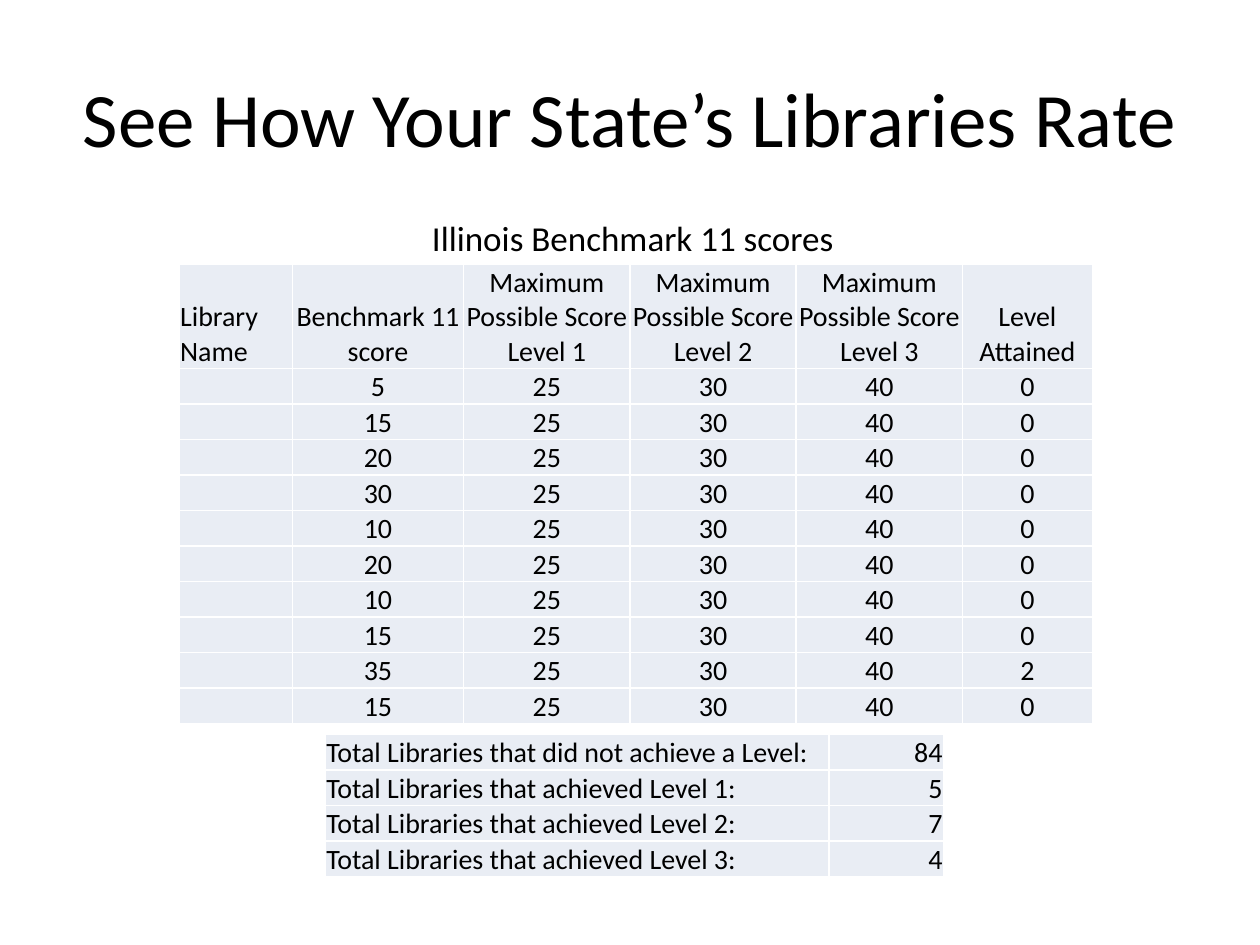
from dataclasses import dataclass

from lxml.etree import SubElement
from pptx import Presentation
from pptx.dml.color import RGBColor as Rgb
from pptx.enum.text import MSO_ANCHOR as Anchor, MSO_AUTO_SIZE as Fit, PP_ALIGN as Align
from pptx.oxml.ns import qn
from pptx.util import Inches, Pt


@dataclass(frozen=True)
class Theme:
    face: str = "Calibri"
    ink: Rgb = Rgb(0, 0, 0)
    fill: Rgb = Rgb(0xE9, 0xED, 0xF4)
    title: int = 44
    label: int = 20
    cell: int = 16


@dataclass(frozen=True)
class Grid:
    left: float
    top: float
    cols: list[float]
    tall: list[float]
    align: list[Align]
    rows: list[list[str]]


THEME = Theme()

# Score table: every library has the same maximum for each level
MAX = ["25", "30", "40"]
MARKS = [(5, 0), (15, 0), (20, 0), (30, 0), (10, 0),
         (20, 0), (10, 0), (15, 0), (35, 2), (15, 0)]
HEAD = ["Library Name", "Benchmark 11 score",
        *[f"Maximum Possible Score Level {n}" for n in (1, 2, 3)],
        "Level Attained"]
SCORES = Grid(
    1.42, 2.1, [0.9, 1.36, 1.32, 1.32, 1.32, 1.03],
    [0.82] + [0.28] * len(MARKS),
    [Align.LEFT] + [Align.CENTER] * 5,
    [HEAD] + [["", str(score), *MAX, str(level)] for score, level in MARKS],
)

# Totals table: libraries per level
GOALS = ["did not achieve a Level"] + [f"achieved Level {n}" for n in (1, 2, 3)]
COUNTS = [84, 5, 7, 4]
TOTALS = Grid(
    2.58, 5.83, [4, 0.91], [0.28] * len(GOALS),
    [Align.LEFT, Align.RIGHT],
    [[f"Total Libraries that {goal}:", str(count)]
     for goal, count in zip(GOALS, COUNTS)],
)


def style(para, size: int, align: Align) -> None:
    para.alignment = align
    font = para.font
    font.name, font.size, font.color.rgb = THEME.face, Pt(size), THEME.ink


def draw_cell(cell, text: str, align: Align) -> None:
    cell.fill.solid()
    cell.fill.fore_color.rgb = THEME.fill
    cell.vertical_anchor = Anchor.BOTTOM
    cell.margin_left = cell.margin_right = cell.margin_top = Inches(0.01)
    cell.margin_bottom = 0
    para = cell.text_frame.paragraphs[0]
    if text:
        para.text = text
    else:
        # An empty cell takes its line height from the end mark
        SubElement(para._p, qn("a:endParaRPr"), sz=str(THEME.cell * 100))
    style(para, THEME.cell, align)


def draw_grid(slide, grid: Grid) -> None:
    table = slide.shapes.add_table(
        len(grid.rows), len(grid.cols), Inches(grid.left), Inches(grid.top),
        Inches(sum(grid.cols)), Inches(sum(grid.tall))).table
    table.first_row = table.horz_banding = False
    for col, width in zip(table.columns, grid.cols):
        col.width = Inches(width)
    for row, height, texts in zip(table.rows, grid.tall, grid.rows):
        row.height = Inches(height)
        for cell, text, align in zip(row.cells, texts, grid.align):
            draw_cell(cell, text, align)


def draw_title(slide, text: str) -> None:
    title = slide.shapes.title
    title.left, title.top = Inches(0.5), Inches(0.3)
    title.width, title.height = Inches(9), Inches(1.25)
    title.text_frame.text = text
    title.text_frame.vertical_anchor = Anchor.MIDDLE
    style(title.text_frame.paragraphs[0], THEME.title, Align.CENTER)


def draw_label(slide, text: str) -> None:
    box = slide.shapes.add_textbox(
        Inches(3.33), Inches(1.67), Inches(3.42), Inches(0.44))
    frame = box.text_frame
    frame.text = text
    frame.word_wrap = False
    frame.auto_size = Fit.SHAPE_TO_FIT_TEXT
    style(frame.paragraphs[0], THEME.label, Align.LEFT)


def main() -> None:
    deck = Presentation()
    deck.slide_width, deck.slide_height = Inches(10), Inches(7.5)
    slide = deck.slides.add_slide(deck.slide_layouts[5])
    draw_title(slide, "See How Your State’s Libraries Rate")
    for grid in (SCORES, TOTALS):
        draw_grid(slide, grid)
    draw_label(slide, "Illinois Benchmark 11 scores")
    deck.save("out.pptx")


if __name__ == "__main__":
    main()
